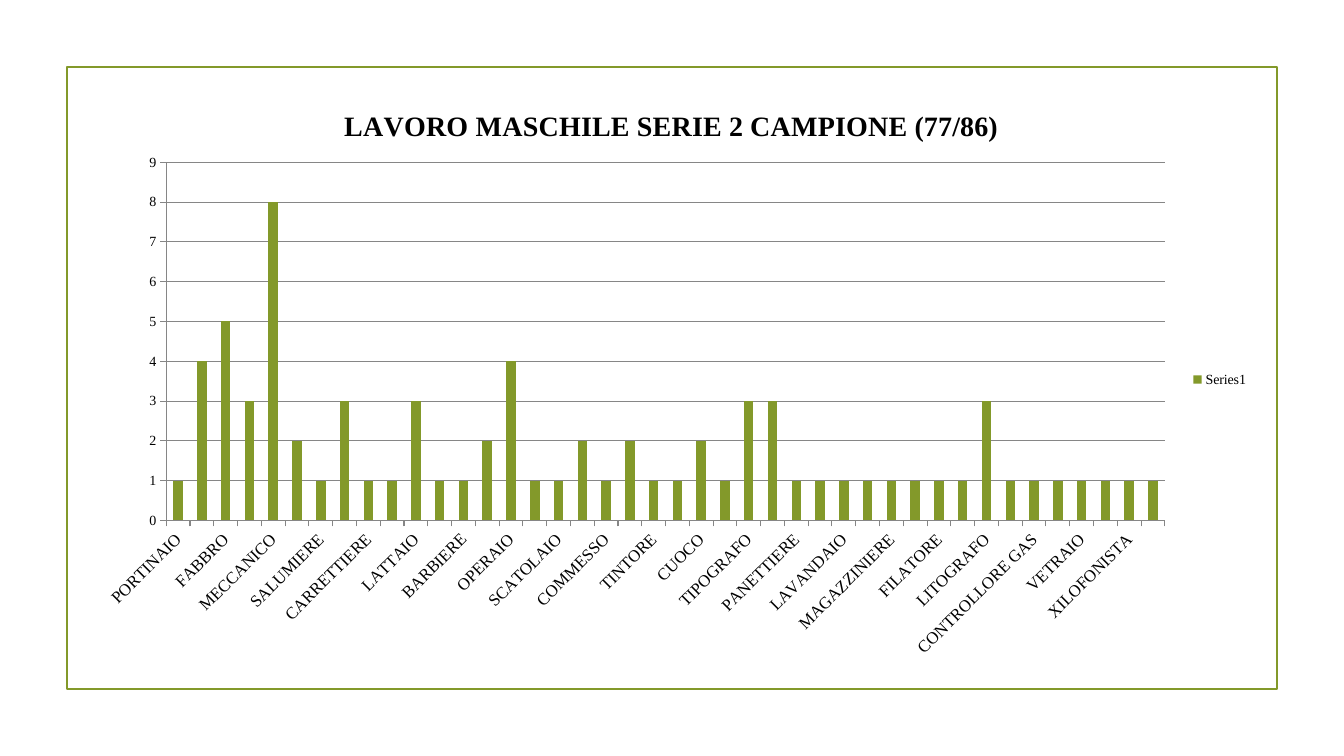
from lxml.etree import SubElement
from pptx import Presentation
from pptx.chart.data import CategoryChartData
from pptx.dml.color import RGBColor
from pptx.enum.chart import XL_CHART_TYPE, XL_LEGEND_POSITION, XL_TICK_MARK
from pptx.enum.shapes import MSO_SHAPE
from pptx.oxml.ns import qn
from pptx.util import Pt

PX = 9525
FONT = "Times New Roman"
GREEN = RGBColor(0x83, 0x99, 0x2A)
BLACK = RGBColor(0, 0, 0)
GRAY = RGBColor(0x86, 0x86, 0x86)
JOBS = [
    ("PORTINAIO", 1), ("COCCHIERE", 4), ("FABBRO", 5), ("FACCHINO", 3),
    ("MECCANICO", 8), ("MURATORE", 2), ("SALUMIERE", 1), ("OREFICE", 3),
    ("CARRETTIERE", 1), ("FERROVIERE", 1), ("LATTAIO", 3), ("TUBISTA", 1),
    ("BARBIERE", 1), ("TRAMVIERE", 2), ("OPERAIO", 4), ("PITTORE", 1),
    ("SCATOLAIO", 1), ("FALEGNAME", 2), ("COMMESSO", 1), ("CALZOLAIO", 2),
    ("TINTORE", 1), ("FATTORINO", 1), ("CUOCO", 2), ("AUTISTA", 1),
    ("TIPOGRAFO", 3), ("VERNICIATORE", 3), ("PANETTIERE", 1), ("PASTAIO", 1),
    ("LAVANDAIO", 1), ("DECORATORE", 1), ("MAGAZZINIERE", 1), ("CHIMICO", 1),
    ("FILATORE", 1), ("MUGNAIO", 1), ("LITOGRAFO", 3), ("CONTADINO", 1),
    ("CONTROLLORE GAS", 1), ("SELCIATORE STRADE", 1), ("VETRAIO", 1),
    ("ELETTRICISTA", 1), ("XILOFONISTA", 1), ("NEGOZIANTE", 1),
]


def style(font, size, bold=False, color=BLACK):
    font.name = FONT
    font.size = Pt(size)
    font.bold = bold
    font.color.rgb = color


def write(frame, text, **fmt):
    run = frame.paragraphs[0].add_run()
    run.text = text
    style(run.font, **fmt)


def add_frame(slide, *box):
    frame = slide.shapes.add_shape(MSO_SHAPE.RECTANGLE, *(n * PX for n in box))
    frame.shadow.inherit = False
    frame.fill.background()
    frame.line.color.rgb = GREEN
    frame.line.width = Pt(1.25)


def set_axis(axis, size):
    axis.major_tick_mark = XL_TICK_MARK.OUTSIDE
    axis.minor_tick_mark = XL_TICK_MARK.NONE
    axis.format.line.color.rgb = GRAY
    axis.format.line.width = Pt(0.75)
    style(axis.tick_labels.font, size)


def place_plot(chart, **area):
    plot = chart.plots[0]._element.getparent()
    for old in plot.findall(qn("c:layout")):
        plot.remove(old)
    layout = SubElement(plot, qn("c:layout"))
    plot.insert(0, layout)
    manual = SubElement(layout, qn("c:manualLayout"))
    parts = {"layoutTarget": "inner", "xMode": "edge", "yMode": "edge", **area}
    for tag, val in parts.items():
        SubElement(manual, qn("c:" + tag)).set("val", str(val))


def add_bars(slide, title, jobs, *box):
    data = CategoryChartData()
    data.categories = [job for job, count in jobs]
    data.add_series("Series1", [count for job, count in jobs])
    chart = slide.shapes.add_chart(
        XL_CHART_TYPE.COLUMN_STACKED, *(n * PX for n in box), data).chart
    style(chart.font, 10)
    chart.has_title = True
    write(chart.chart_title.text_frame, title, size=20, bold=True)
    chart.chart_title.include_in_layout = False
    chart.has_legend = True
    chart.legend.position = XL_LEGEND_POSITION.RIGHT
    chart.legend.include_in_layout = False
    style(chart.legend.font, 10)

    bars = chart.plots[0]
    bars.gap_width = 150
    bars.overlap = 100
    bars.vary_by_categories = False
    fill = bars.series[0].format.fill
    fill.solid()
    fill.fore_color.rgb = GREEN

    set_axis(chart.category_axis, 12)
    turn = chart.category_axis._element.find(qn("c:txPr")).find(qn("a:bodyPr"))
    turn.set("rot", "-2700000")
    scale = chart.value_axis
    set_axis(scale, 10)
    scale.minimum_scale = 0
    scale.maximum_scale = 9
    scale.major_unit = 1
    scale.has_major_gridlines = True
    scale.major_gridlines.format.line.color.rgb = GRAY
    scale.major_gridlines.format.line.width = Pt(0.75)
    place_plot(chart, x=0.07, y=0.13, w=0.85, h=0.61)


def main():
    deck = Presentation()
    deck.slide_width = 1280 * PX
    deck.slide_height = 720 * PX
    slide = deck.slides.add_slide(deck.slide_layouts[6])
    add_frame(slide, 64, 64, 1152, 592)
    add_bars(slide, "LAVORO MASCHILE SERIE 2 CAMPIONE (77/86)", JOBS,
             80, 82, 1119, 559)
    deck.save("out.pptx")


if __name__ == "__main__":
    main()
